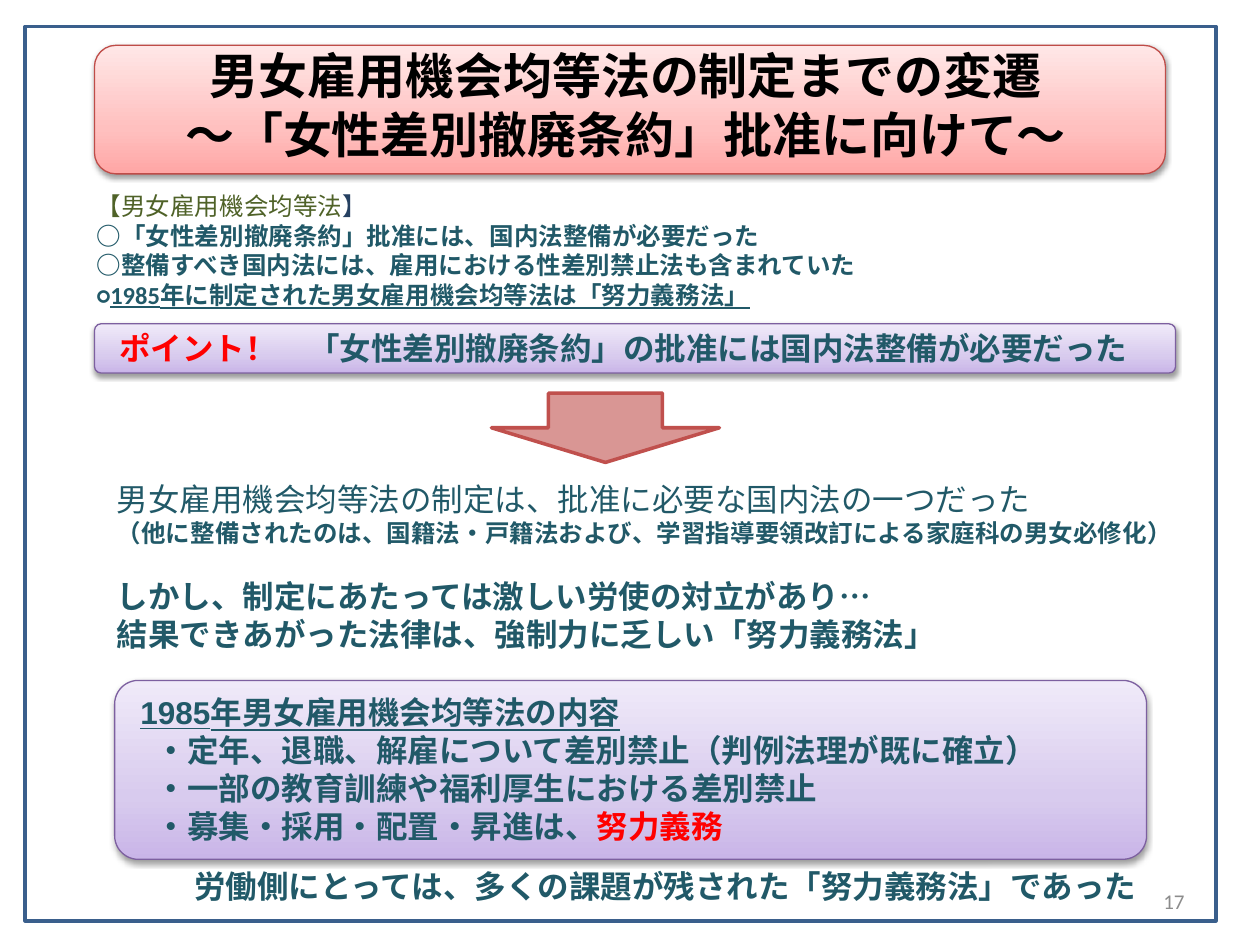
"""Build the slide on the path to the equal employment opportunity act."""
import pptx
import pptx.dml.color
import pptx.enum.shapes
import pptx.enum.text
import pptx.oxml
import pptx.util

Inches = pptx.util.Inches
Pt = pptx.util.Pt
Align = pptx.enum.text.PP_ALIGN
Anchor = pptx.enum.text.MSO_ANCHOR
Shape = pptx.enum.shapes.MSO_SHAPE
NAMESPACE = 'xmlns:a="http://schemas.openxmlformats.org/drawingml/2006/main"'
TEAL = "215968"
RED = "FF0000"
PURPLE = ("C9B5E8", "D8CBEE", "F0EAF9")
PINK = ("FFA6A5", "FFC0BF", "FFE7E7")


def color(value):
    return pptx.dml.color.RGBColor.from_string(value)


def write(frame, lines, size=18, font="Calibri", fill=TEAL, bold=True, align=Align.LEFT,
          anchor=Anchor.TOP, left=0.1, right=0.1):
    frame.word_wrap = True
    frame.auto_size = pptx.enum.text.MSO_AUTO_SIZE.NONE
    frame.vertical_anchor = anchor
    frame.margin_left, frame.margin_right = Inches(left), Inches(right)
    frame.margin_top = frame.margin_bottom = Inches(0.05)
    for index, line in enumerate(lines):
        para = frame.paragraphs[0] if index == 0 else frame.add_paragraph()
        para.alignment = align
        for text, changes in line:
            style = {"size": size, "fill": fill, "bold": bold, "underline": False} | changes
            span = para.add_run()
            span.text = text
            span.font.name = font
            span.font.size = Pt(style["size"])
            span.font.bold = style["bold"]
            span.font.underline = style["underline"]
            span.font.color.rgb = color(style["fill"])


deck = pptx.Presentation()
deck.slide_width, deck.slide_height = Inches(10), Inches(7.5)
slide = deck.slides.add_slide(deck.slide_layouts[5])
shapes = slide.shapes

panels = []
for place, corner, stops, edge in [
    ((0.91, 5.4, 8.19, 1.42), 0.132, PURPLE, "7D60A0"),
    ((0.75, 2.57, 8.58, 0.39), 0.132, PURPLE, "7D60A0"),
    ((0.75, 0.36, 8.5, 1.02), 0.167, PINK, "BF4C48"),
]:
    panel = shapes.add_shape(Shape.ROUNDED_RECTANGLE, *map(Inches, place))
    panel.adjustments[0] = corner
    panel.line.color.rgb = color(edge)
    panel.line.width = Pt(0.75)
    stop_list = "".join(
        f'<a:gs pos="{position}"><a:srgbClr val="{stop}"/></a:gs>'
        for position, stop in zip((0, 35000, 100000), stops))
    gradient = pptx.oxml.parse_xml(
        f'<a:gradFill {NAMESPACE} rotWithShape="1"><a:gsLst>{stop_list}</a:gsLst>'
        '<a:lin ang="16200000" scaled="0"/></a:gradFill>')
    shadow = pptx.oxml.parse_xml(
        f'<a:effectLst {NAMESPACE}><a:outerShdw blurRad="{Pt(3.1)}" dist="{Pt(1.6)}" '
        'dir="5400000" rotWithShape="0"><a:srgbClr val="000000"><a:alpha val="38000"/>'
        '</a:srgbClr></a:outerShdw></a:effectLst>')
    properties = panel.element.spPr
    properties.insert(2, gradient)
    properties.append(shadow)
    panels.append(panel)
content_panel, point_panel, title_panel = panels

border = shapes.add_shape(Shape.RECTANGLE, Inches(0.2), Inches(0.21), Inches(9.45), Inches(7.1))
border.fill.background()
border.line.color.rgb = color("3A5F8C")
border.line.width = Pt(2)
border.shadow.inherit = False

title = shapes.title
title.left, title.top, title.width, title.height = map(Inches, (0.75, 0.36, 8.43, 0.94))
write(title.text_frame,
      [[("男女雇用機会均等法の制定までの変遷", {})],
       [("～「女性差別撤廃条約」批准に向けて～", {})]],
      size=28, font="Arial", fill="000000", align=Align.CENTER, anchor=Anchor.MIDDLE)
title_panel.element.addnext(title.element)

write(point_panel.text_frame,
      [[("ポイント！　", {"fill": RED}),
        ("「女性差別撤廃条約」の批准には国内法整備が必要だった", {})]],
      anchor=Anchor.MIDDLE, left=0.18, right=0)

write(content_panel.text_frame,
      [[("1985年男女雇用機会均等法の内容", {"underline": True})],
       [("・定年、退職、解雇について差別禁止（判例法理が既に確立）", {})],
       [("・一部の教育訓練や福利厚生における差別禁止", {})],
       [("・募集・採用・配置・昇進は、", {}), ("努力義務", {"fill": RED})]],
      font="Arial", left=0.15)
for item in content_panel.text_frame.paragraphs[1:]:
    item._p.get_or_add_pPr().set("marL", str(Inches(0.12)))

for place, lines, style in [
    ((0.67, 1.47, 8.74, 1.04),
     [[("【男女雇用機会均等法", {"fill": "4F6228", "bold": False}),
       ("】", {"fill": "254061", "bold": False})],
      [("○「女性差別撤廃条約」批准には、国内法整備が必要だった", {})],
      [("○整備すべき国内法には、雇用における性差別禁止法も含まれていた", {})],
      [("○", {}), ("1985年に制定された男女雇用機会均等法は「努力義務法」", {"underline": True})]],
     {"size": 14}),
    ((0.83, 3.76, 8.66, 0.65),
     [[("男女雇用機会均等法の制定は、批准に必要な国内法の一つだった", {"bold": False})],
      [("（他に整備されたのは、国籍法・戸籍法および、学習指導要領改訂による家庭科の男女必修化）",
        {"size": 14})]],
     {}),
    ((0.83, 4.53, 8.66, 0.7),
     [[("しかし、制定にあたっては激しい労使の対立があり…", {})],
      [("結果できあがった法律は、強制力に乏しい「努力義務法」", {})]],
     {"font": "Arial"}),
    ((0.95, 6.83, 8.66, 0.4),
     [[("労働側にとっては、多くの課題が残された「努力義務法」であった", {})]],
     {"font": "Arial", "align": Align.CENTER}),
    ((7.17, 6.95, 2.33, 0.4),
     [[("17", {})]],
     {"size": 12, "fill": "8C8C8C", "bold": False, "align": Align.RIGHT,
      "anchor": Anchor.MIDDLE}),
]:
    box = shapes.add_textbox(*map(Inches, place))
    write(box.text_frame, lines, **style)

arrow = shapes.add_shape(Shape.DOWN_ARROW, Inches(3.9), Inches(3.12), Inches(1.81), Inches(0.55))
arrow.fill.solid()
arrow.fill.fore_color.rgb = color("D99694")
arrow.line.color.rgb = color("C0504D")
arrow.line.width = Pt(2)
arrow.shadow.inherit = False

deck.save("out.pptx")
